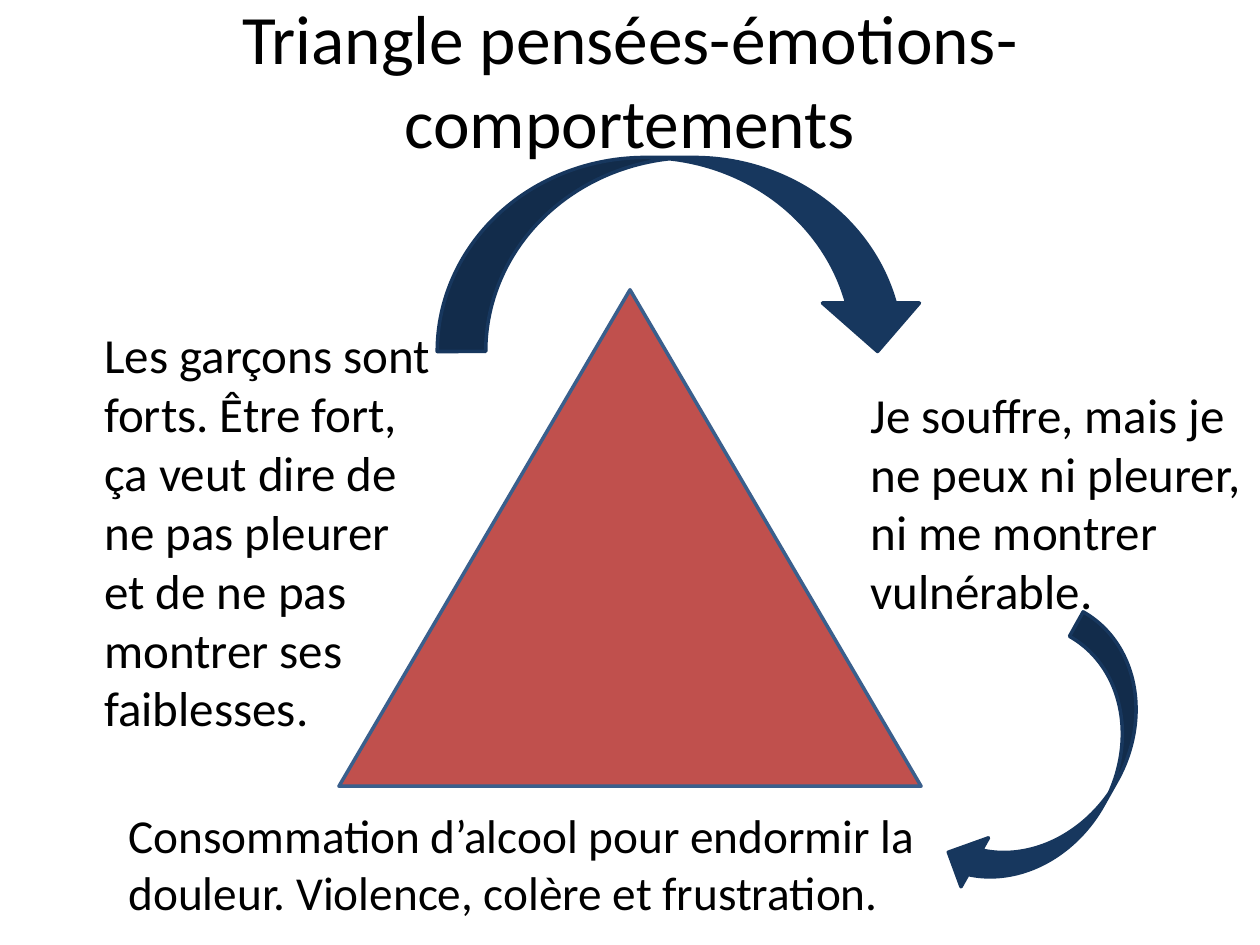
from dataclasses import dataclass

from pptx import Presentation
from pptx import util as u
from pptx.dml.color import RGBColor
from pptx.enum import shapes, text


@dataclass(frozen=True)
class Theme:
    font: str = "Calibri"
    ink: str = "000000"
    triangle: str = "C0504D"
    triangle_edge: str = "3A5F8C"
    arrow: str = "17375E"
    title_size: float = 39.6
    corner_size: float = 28
    base_size: float = 27
    line_width: float = 2


def write(frame, wording, *, size, theme, align=text.PP_ALIGN.LEFT,
          anchor=text.MSO_ANCHOR.TOP, autofit=text.MSO_AUTO_SIZE.NONE):
    frame.word_wrap = True
    frame.auto_size = autofit
    frame.vertical_anchor = anchor
    paragraph = frame.paragraphs[0]
    paragraph.alignment = align
    run = paragraph.add_run()
    run.text = wording
    run.font.name = theme.font
    run.font.size = u.Pt(size)
    run.font.color.rgb = RGBColor.from_string(theme.ink)


class SlideBuilder:
    def __init__(self, slide, theme):
        self.slide = slide
        self.theme = theme

    def title(self, wording, *box):
        heading = self.slide.shapes.title
        heading.left, heading.top, heading.width, heading.height = map(u.Inches, box)
        write(heading.text_frame, wording, size=self.theme.title_size, theme=self.theme,
              align=text.PP_ALIGN.CENTER, anchor=text.MSO_ANCHOR.MIDDLE)
        # The title lies in front of the arrow that touches it.
        self.slide.shapes._spTree.append(heading._element)

    def label(self, wording, *box, size, autofit=text.MSO_AUTO_SIZE.NONE):
        caption = self.slide.shapes.add_textbox(*map(u.Inches, box))
        write(caption.text_frame, wording, size=size, theme=self.theme, autofit=autofit)

    def shape(self, kind, *box, fill, edge, rotation=0):
        figure = self.slide.shapes.add_shape(kind, *map(u.Inches, box))
        figure.shadow.inherit = False
        figure.rotation = rotation
        figure.fill.solid()
        figure.fill.fore_color.rgb = RGBColor.from_string(fill)
        figure.line.color.rgb = RGBColor.from_string(edge)
        figure.line.width = u.Pt(self.theme.line_width)

    def arrow(self, kind, *box, rotation=0):
        self.shape(kind, *box, fill=self.theme.arrow, edge=self.theme.arrow,
                   rotation=rotation)


def main():
    deck = Presentation()
    deck.slide_width, deck.slide_height = u.Inches(10), u.Inches(7.5)
    title_only = deck.slide_layouts[5]
    theme = Theme()
    page = SlideBuilder(deck.slides.add_slide(title_only), theme)
    kinds = shapes.MSO_SHAPE
    grow = text.MSO_AUTO_SIZE.SHAPE_TO_FIT_TEXT

    page.shape(kinds.ISOSCELES_TRIANGLE, 2.69, 2.3, 4.62, 3.94,
               fill=theme.triangle, edge=theme.triangle_edge)
    page.label("Les garçons sont forts. Être fort, ça veut dire de ne pas pleurer "
               "et de ne pas montrer ses faiblesses.",
               0.73, 2.53, 2.86, 3.4, size=theme.corner_size, autofit=grow)
    page.label("Je souffre, mais je ne peux ni pleurer, ni me montrer vulnérable.",
               6.81, 3, 3.18, 1.99, size=theme.corner_size, autofit=grow)
    page.label("Consommation d’alcool pour endormir la douleur. "
               "Violence, colère et frustration.",
               0.92, 6.35, 6.58, 1.15, size=theme.base_size)
    page.arrow(kinds.CURVED_DOWN_ARROW, 3.47, 1.25, 3.88, 1.54)
    page.arrow(kinds.CURVED_LEFT_ARROW, 7.95, 4.92, 0.89, 2.41, rotation=29.3)
    page.title("Triangle pensées-émotions-comportements", 0.5, 0, 9, 1.25)

    deck.save("out.pptx")


if __name__ == "__main__":
    main()
